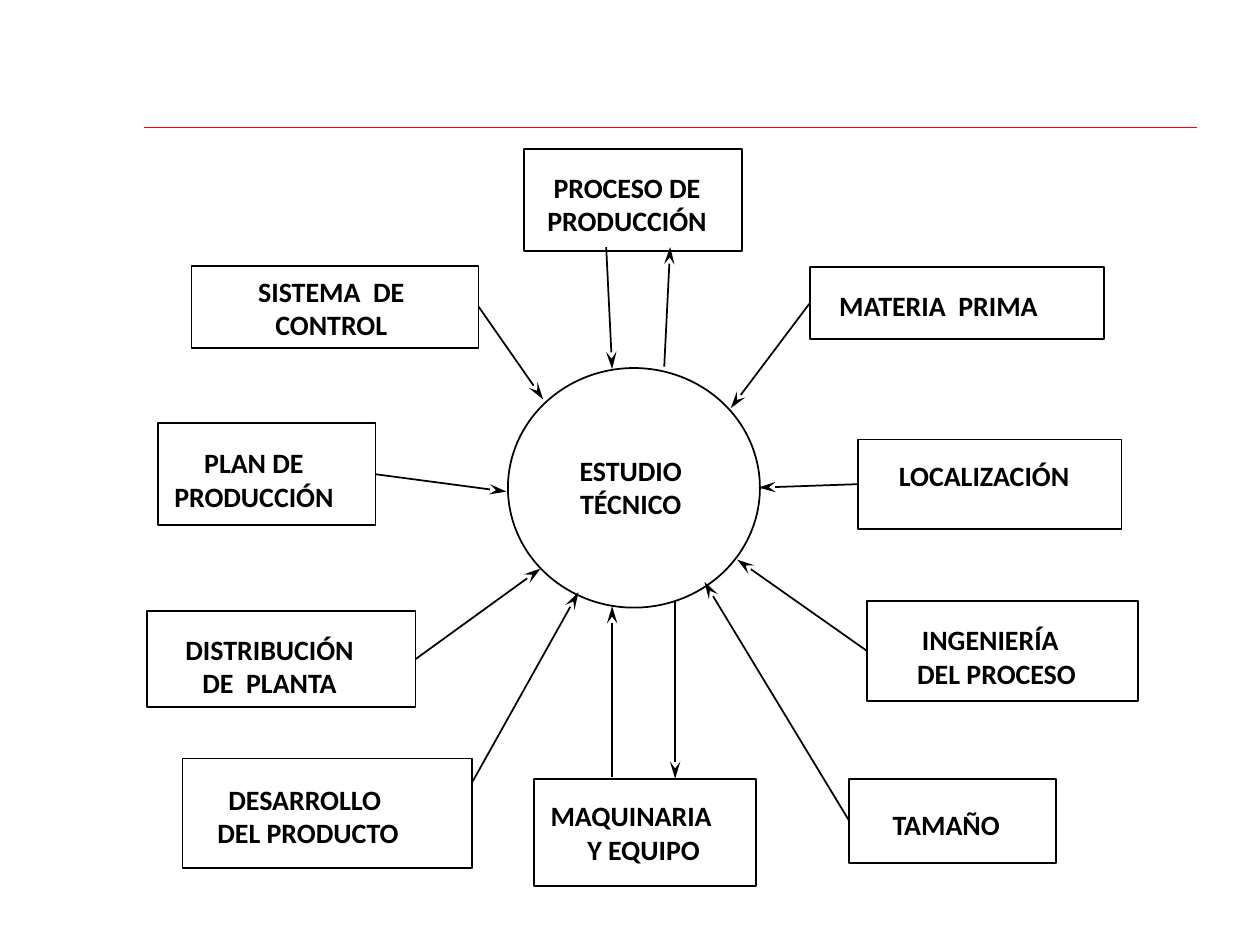
from lxml import etree
from pptx import Presentation
from pptx.dml.color import RGBColor
from pptx.enum.shapes import MSO_CONNECTOR, MSO_SHAPE
from pptx.enum.text import MSO_ANCHOR, PP_ALIGN
from pptx.oxml.ns import qn
from pptx.util import Cm, Pt

BLACK = RGBColor(0x00, 0x00, 0x00)
RED = RGBColor(0xFF, 0x00, 0x00)
RECTANGLE = MSO_SHAPE.RECTANGLE
OVAL = MSO_SHAPE.OVAL
STRAIGHT = MSO_CONNECTOR.STRAIGHT
CENTER = PP_ALIGN.CENTER
TOP = MSO_ANCHOR.TOP
LEFT_SIDE, RIGHT_SIDE = 1, 3

CENTRE = ("ESTUDIO\nTÉCNICO", (10.24, 7.42, 5.08, 4.83), (11.38, 8.99, 2.67))

FACTORS = [
    ("PROCESO DE\nPRODUCCIÓN", (10.57, 3, 4.39, 2.06), (10.72, 3.28, 3.84), 0),
    ("MATERIA  PRIMA", (16.33, 5.38, 5.92, 1.45), (16.61, 5.66, 4.62), 0),
    ("LOCALIZACIÓN", (17.3, 8.86, 5.31, 1.8), (17.81, 9.09, 4.06), 0),
    ("INGENIERÍA\nDEL PROCESO", (17.48, 12.12, 5.46, 2.01), (17.66, 12.4, 4.61), 0.25),
    ("TAMAÑO", (17.12, 15.7, 4.17, 1.7), (17.33, 16.13, 3.49), 0),
    ("MAQUINARIA\nY EQUIPO", (10.77, 15.7, 4.47, 2.16), (10.73, 15.95, 3.99), 0.5),
    ("DESARROLLO\nDEL PRODUCTO", (3.68, 15.29, 5.84, 2.21), (3.61, 15.62, 5.07), 0.13),
    ("DISTRIBUCIÓN\nDE  PLANTA", (2.97, 12.32, 5.41, 1.93), (3.43, 12.6, 4.01), 0),
    ("PLAN DE\nPRODUCCIÓN", (3.18, 8.53, 4.39, 2.06), (3.2, 8.84, 3.84), 0),
    ("SISTEMA  DE\nCONTROL", (3.86, 5.36, 5.79, 1.65), (4.9, 5.38, 3.56), 0),
]

JOINED_ARROWS = [
    ("MATERIA  PRIMA", LEFT_SIDE, (14.73, 8.23)),
    ("LOCALIZACIÓN", LEFT_SIDE, (15.29, 9.83)),
    ("INGENIERÍA\nDEL PROCESO", LEFT_SIDE, (14.86, 11.28)),
    ("TAMAÑO", LEFT_SIDE, (14.2, 11.73)),
    ("DISTRIBUCIÓN\nDE  PLANTA", RIGHT_SIDE, (10.9, 11.46)),
    ("PLAN DE\nPRODUCCIÓN", RIGHT_SIDE, (10.21, 9.91)),
    ("SISTEMA  DE\nCONTROL", RIGHT_SIDE, (10.95, 8.05)),
]

FREE_ARROWS = [
    ((12.22, 4.98), (12.34, 7.44)),
    ((13.39, 7.39), (13.51, 4.98)),
    ((12.34, 15.67), (12.34, 12.22)),
    ((13.61, 12.14), (13.61, 15.7)),
    ((9.53, 15.75), (11.66, 11.94)),
]


def write_text(frame, text, font="Calibri", size=16, color=BLACK, bold=True,
               align=CENTER, last_indent=0):
    lines = text.split("\n")
    for index, line in enumerate(lines):
        paragraph = frame.paragraphs[0] if index == 0 else frame.add_paragraph()
        if last_indent and index == len(lines) - 1:
            paragraph._p.get_or_add_pPr().set("marL", str(Cm(last_indent)))
        paragraph.alignment = align
        run = paragraph.add_run()
        run.text = line
        run.font.name = font
        run.font.size = Pt(size)
        run.font.bold = bold
        run.font.color.rgb = color


class Diagram:
    line_width = Pt(1)
    label_heights = {1: 0.96, 2: 1.65}

    def __init__(self, slide):
        self.slide = slide

    def outline(self, kind, bounds):
        outline = self.slide.shapes.add_shape(kind, *map(Cm, bounds))
        outline.shadow.inherit = False
        outline.fill.background()
        outline.line.color.rgb = BLACK
        outline.line.width = self.line_width
        return outline

    def label(self, text, place, last_indent=0):
        height = self.label_heights[len(text.split("\n"))]
        label = self.slide.shapes.add_textbox(*map(Cm, (*place, height)))
        frame = label.text_frame
        frame.word_wrap = False
        frame.vertical_anchor = TOP
        frame.margin_left = frame.margin_right = Cm(0.28)
        frame.margin_top = frame.margin_bottom = Cm(0.15)
        write_text(frame, text, last_indent=last_indent)

    def line(self, start, end, color=BLACK):
        line = self.slide.shapes.add_connector(STRAIGHT, *map(Cm, (*start, *end)))
        line.line.color.rgb = color
        line.line.width = self.line_width
        etree.SubElement(line._element.spPr, qn("a:effectLst"))
        return line

    def arrow(self, start, end):
        arrow = self.line(start, end)
        stroke = arrow._element.spPr.find(qn("a:ln"))
        etree.SubElement(stroke, qn("a:tailEnd"), type="stealth", w="med", len="lg")
        return arrow

    def joined_arrow(self, factor, side, end):
        self.arrow(end, end).begin_connect(factor, side)


def main():
    presentation = Presentation()
    presentation.slide_width = Cm(25.4)
    presentation.slide_height = Cm(19.05)
    diagram = Diagram(presentation.slides.add_slide(presentation.slide_layouts[6]))

    diagram.line((2.9, 2.57), (24.13, 2.57), RED)
    study, circle, study_place = CENTRE
    diagram.label(study, study_place)
    diagram.outline(OVAL, circle)

    factors = {}
    for name, bounds, place, last_indent in FACTORS:
        diagram.label(name, place, last_indent)
        factors[name] = diagram.outline(RECTANGLE, bounds)

    for name, side, end in JOINED_ARROWS:
        diagram.joined_arrow(factors[name], side, end)
    for start, end in FREE_ARROWS:
        diagram.arrow(start, end)

    presentation.save("out.pptx")


if __name__ == "__main__":
    main()
